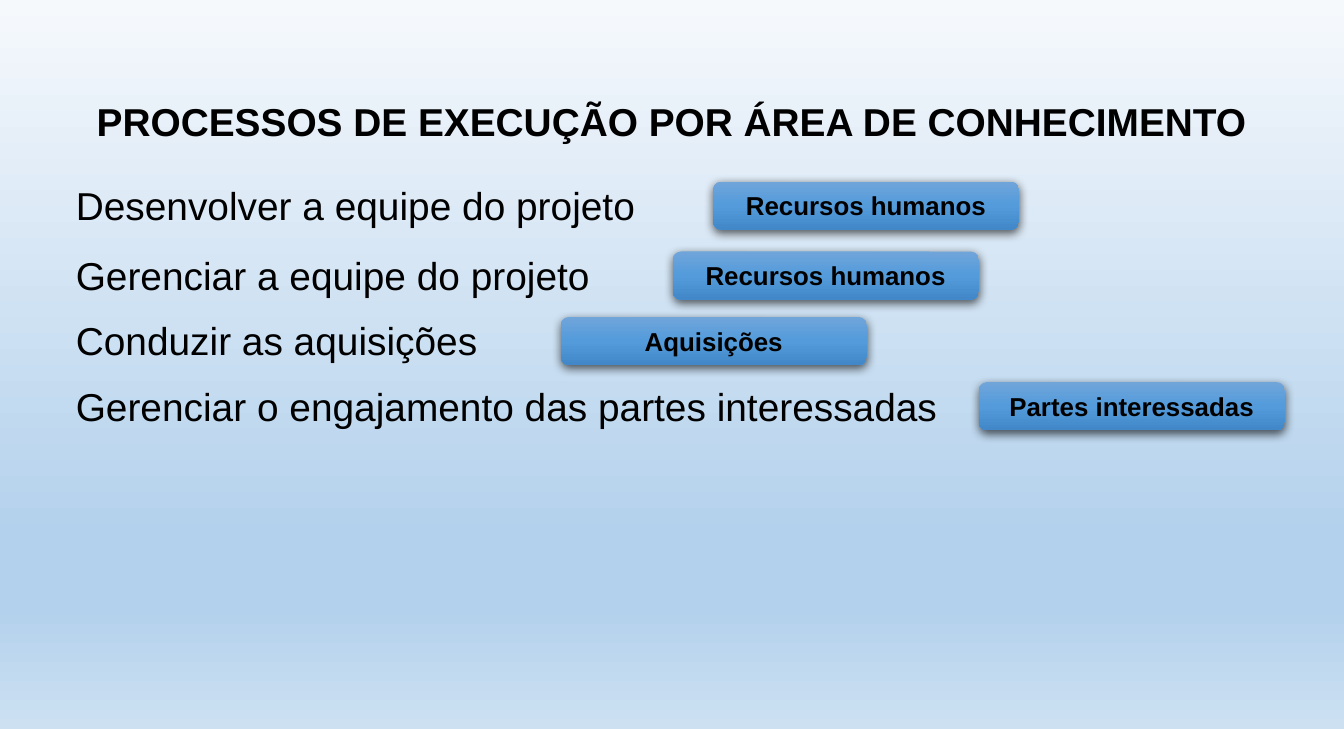
from lxml.etree import SubElement
from pptx import Presentation
from pptx.dml.color import RGBColor
from pptx.enum.shapes import MSO_SHAPE as Shape
from pptx.enum.text import MSO_ANCHOR as Anchor, PP_ALIGN as Align
from pptx.oxml.ns import qn
from pptx.util import Pt

TITLE = "PROCESSOS DE EXECUÇÃO POR ÁREA DE CONHECIMENTO"
PROCESSES = [
    ("Desenvolver a equipe do projeto", "Recursos humanos", 80.6, 330.5),
    ("Gerenciar a equipe do projeto", "Recursos humanos", 113, 311.8),
    ("Conduzir as aquisições", "Aquisições", 143.3, 259.9),
    ("Gerenciar o engajamento das partes interessadas", "Partes interessadas", 173.5, 453.6),
]
COLORS = {
    "text": "000000", "shadow": "000000",
    "sky": "F6F9FC", "mist": "B3D1EC", "haze": "CCE0F2",
    "light": "70A5DA", "middle": "539BDB", "deep": "4288C8",
}
PAGE_STOPS = [(0, "sky"), (74, "mist"), (83, "mist"), (100, "haze")]
BADGE_STOPS = [(0, "light"), (50, "middle"), (100, "deep")]
PAGE_WIDTH, PAGE_HEIGHT = 622.8, 337.7
LEFT, LINE_WIDTH, LINE_HEIGHT = 28.1, 566.6, 29
TITLE_TOP = 41.8
BADGE_WIDTH, BADGE_HEIGHT, BADGE_DROP = 141.8, 22.3, 3.5


def add_color(parent, name):
    return SubElement(parent, qn("a:srgbClr"), val=COLORS[name])


def paint_gradient(fill, element, stops):
    fill.gradient()
    fill.gradient_angle = 270
    stop_list = next(element.iter(qn("a:gsLst")))
    for old_stop in list(stop_list):
        stop_list.remove(old_stop)
    for percent, name in stops:
        add_color(SubElement(stop_list, qn("a:gs"), pos=str(percent * 1000)), name)


def add_shadow(shape):
    shape.shadow.inherit = False
    effects = next(shape.element.iter(qn("a:effectLst")))
    shadow = SubElement(effects, qn("a:outerShdw"), blurRad=str(Pt(4.5)),
                        dist=str(Pt(1.5)), dir="5400000", algn="ctr", rotWithShape="0")
    SubElement(add_color(shadow, "shadow"), qn("a:alpha"), val="63000")


def write(shape, text, size=18, bold=False, align=Align.LEFT, anchor=Anchor.TOP):
    frame = shape.text_frame
    frame.word_wrap = True
    frame.vertical_anchor = anchor
    para = frame.paragraphs[0]
    para.alignment = align
    span = para.add_run()
    span.text = text
    span.font.name = "Arial"
    span.font.size = Pt(size)
    span.font.bold = bold
    span.font.color.rgb = RGBColor.from_string(COLORS["text"])


def add_line(page, text, top, **style):
    box = page.shapes.add_textbox(Pt(LEFT), Pt(top), Pt(LINE_WIDTH), Pt(LINE_HEIGHT))
    write(box, text, **style)


def add_badge(page, text, left, top):
    badge = page.shapes.add_shape(Shape.ROUNDED_RECTANGLE, Pt(left), Pt(top),
                                  Pt(BADGE_WIDTH), Pt(BADGE_HEIGHT))
    badge.adjustments[0] = 0.17
    paint_gradient(badge.fill, badge.element, BADGE_STOPS)
    badge.line.fill.background()
    add_shadow(badge)
    write(badge, text, size=12, bold=True, align=Align.CENTER, anchor=Anchor.MIDDLE)


def main():
    """Build the slide of execution processes by knowledge area."""
    deck = Presentation()
    deck.slide_width, deck.slide_height = Pt(PAGE_WIDTH), Pt(PAGE_HEIGHT)
    page = deck.slides.add_slide(deck.slide_layouts[6])
    paint_gradient(page.background.fill, page.element, PAGE_STOPS)
    add_line(page, TITLE, TITLE_TOP, bold=True, align=Align.CENTER)
    for process, area, top, badge_left in PROCESSES:
        add_line(page, process, top)
        add_badge(page, area, badge_left, top + BADGE_DROP)
    deck.save("out.pptx")


if __name__ == "__main__":
    main()
